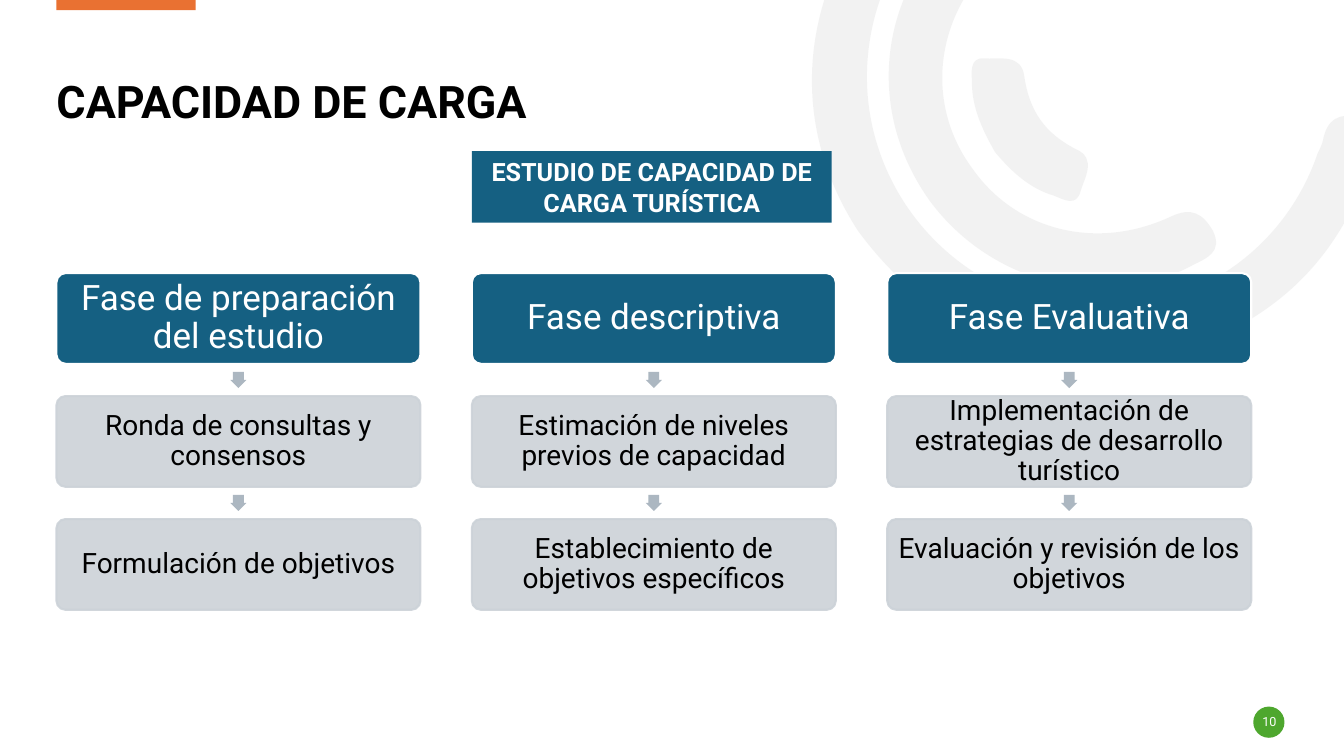
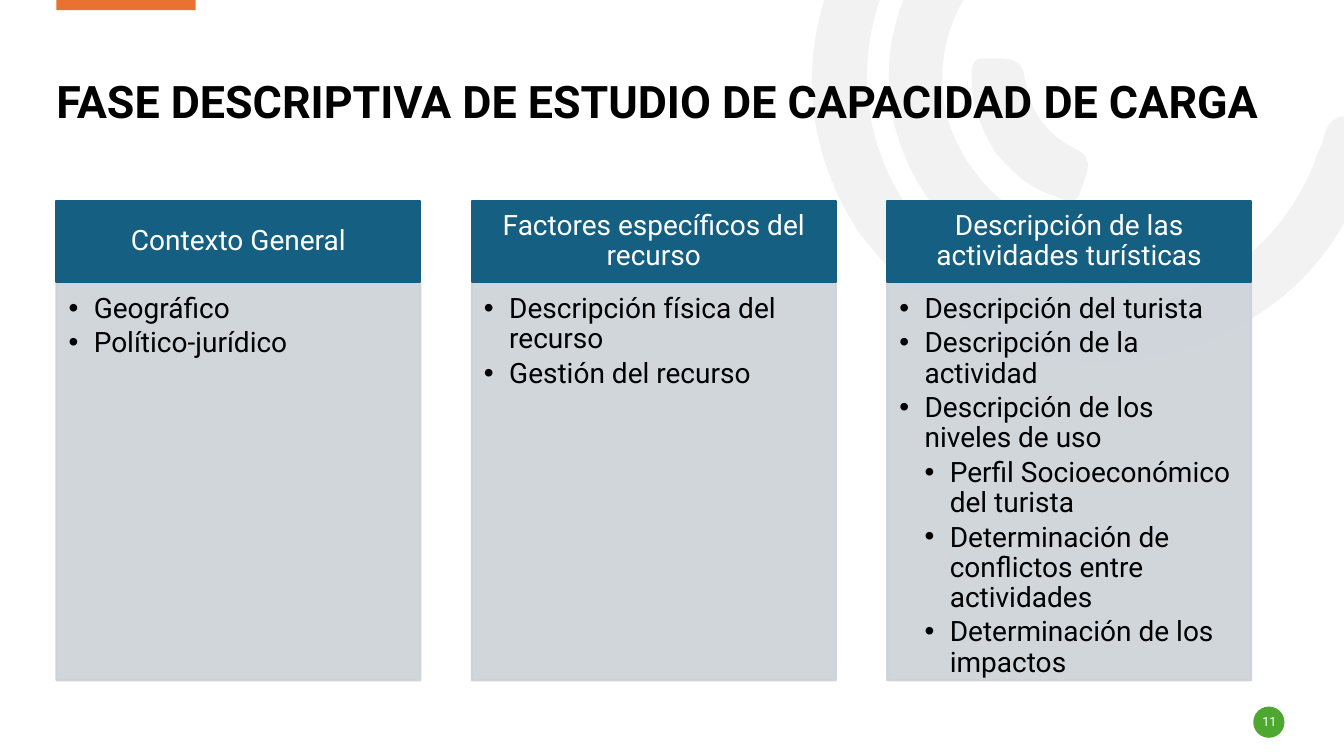
import pptx
import pptx.dml.color
import pptx.enum.shapes
import pptx.enum.text
import pptx.oxml
import pptx.oxml.ns
import pptx.util
from dataclasses import dataclass

Inches = pptx.util.Inches
Pt = pptx.util.Pt
Shape = pptx.enum.shapes.MSO_SHAPE
Align = pptx.enum.text.PP_ALIGN
Anchor = pptx.enum.text.MSO_ANCHOR

PHASES_TITLE = "CAPACIDAD DE CARGA"
STUDY = "ESTUDIO DE CAPACIDAD DE CARGA TURÍSTICA"
PHASES = [
    ("Fase de preparación del estudio", "Ronda de consultas y consensos",
     "Formulación de objetivos"),
    ("Fase descriptiva", "Estimación de niveles previos de capacidad",
     "Establecimiento de objetivos específicos"),
    ("Fase Evaluativa", "Implementación de estrategias de desarrollo turístico",
     "Evaluación y revisión de los objetivos"),
]
TOPICS_TITLE = "FASE DESCRIPTIVA DE ESTUDIO DE CAPACIDAD DE CARGA"
TOPICS = [  # heading, then (level, item)
    ("Contexto General", [(0, "Geográfico"), (0, "Político-jurídico")]),
    ("Factores específicos del recurso",
     [(0, "Descripción física del recurso"), (0, "Gestión del recurso")]),
    ("Descripción de las actividades turísticas",
     [(0, "Descripción del turista"), (0, "Descripción de la actividad"),
      (0, "Descripción de los niveles de uso"),
      (1, "Perfil Socioeconómico del turista"),
      (1, "Determinación de conflictos entre actividades"),
      (1, "Determinación de los impactos")]),
]
FIRST_NUMBER = 10

# Each arc: start point, then Bézier segments (two controls and an end), in inches.
ARCS = [
    ((8.51, 2.29), [
        (7.99, 1.49, 7.87, 0.5, 8.38, -0.5), (8.9, -1.52, 9.76, -2.03, 10.9, -2.07),
        (11.05, -2.07, 11.21, -2.1, 11.31, -1.95), (11.44, -1.75, 11.27, -1.54, 10.98, -1.54),
        (9.67, -1.54, 8.65, -0.59, 8.6, 0.68), (8.56, 1.81, 9.36, 2.81, 10.46, 3.02),
        (11.6, 3.24, 12.7, 2.61, 13.07, 1.52), (13.09, 1.48, 13.11, 1.44, 13.12, 1.4),
        (13.16, 1.19, 13.27, 1.11, 13.49, 1.17), (13.73, 1.24, 13.67, 1.41, 13.61, 1.56),
        (13.34, 2.45, 12.78, 3.07, 11.91, 3.41), (10.7, 3.87, 9.36, 3.45, 8.51, 2.29)]),
    ((9.22, 1.99), [
        (8.62, 1.15, 8.69, 0.07, 9.4, -0.68), (9.51, -0.79, 9.62, -0.95, 9.8, -0.78),
        (9.95, -0.64, 9.97, -0.5, 9.79, -0.32), (9.25, 0.26, 9.2, 1.08, 9.65, 1.68),
        (10.08, 2.29, 10.88, 2.49, 11.61, 2.15), (11.82, 2.05, 11.93, 2.12, 12.03, 2.29),
        (12.13, 2.5, 11.97, 2.56, 11.83, 2.63), (10.96, 3.1, 9.83, 2.82, 9.22, 1.99)]),
    ((9.87, 1.51), [
        (9.75, 1.3, 9.64, 1.07, 9.64, 0.82), (9.64, 0.73, 9.61, 0.57, 9.76, 0.58),
        (9.92, 0.59, 10.13, 0.53, 10.16, 0.76), (10.21, 1.1, 10.36, 1.32, 10.67, 1.48),
        (10.88, 1.57, 10.76, 1.76, 10.72, 1.89), (10.68, 2.06, 10.55, 1.98, 10.45, 1.94),
        (10.21, 1.87, 10.03, 1.7, 9.87, 1.51)]),
]


@dataclass(frozen=True)
class Theme:
    font: str = "Roboto"
    white: str = "FFFFFF"
    black: str = "000000"
    blue: str = "156082"
    grey: str = "CCD2D8"
    arrow: str = "ACB7C1"
    arc: str = "E8E8E8"
    orange: str = "E97132"
    green: str = "4EA72E"
    title_size: int = 32
    phase_size: int = 25
    text_size: int = 20
    study_size: int = 18
    number_size: int = 9
    line_width: float = 1.5


THEME = Theme()
COLUMN_WIDTH = 3.61
COLUMN_LEFT, COLUMN_RIGHT = 0.56, 12.41


def column_lefts(count):
    pitch = (COLUMN_RIGHT - COLUMN_LEFT - COLUMN_WIDTH) / (count - 1)
    return [COLUMN_LEFT + index * pitch for index in range(count)]


def rgb(value):
    return pptx.dml.color.RGBColor.from_string(value)


def paint(shape, fill, line=None, opacity=None):
    """Set flat fill and outline; opacity is a percentage for both."""
    shape.fill.solid()
    shape.fill.fore_color.rgb = rgb(fill)
    if line:
        shape.line.color.rgb = rgb(line)
        shape.line.width = Pt(THEME.line_width)
    else:
        shape.line.fill.background()
    if opacity:
        for color in shape.element.spPr.iter(pptx.oxml.ns.qn("a:srgbClr")):
            alpha = color.makeelement(pptx.oxml.ns.qn("a:alpha"), {"val": str(opacity * 1000)})
            color.append(alpha)


def add_box(page, kind, left, top, width, height, fill, line=None, opacity=None, corner=()):
    box = page.shapes.add_shape(kind, Inches(left), Inches(top), Inches(width), Inches(height))
    box.shadow.inherit = False
    for index, value in enumerate(corner):
        box.adjustments[index] = value
    paint(box, fill, line, opacity)
    return box


def write(box, text, size, color=THEME.white, bold=False, align=Align.CENTER,
          anchor=Anchor.MIDDLE, margins=(0, 0, 0, 0), spacing=0.9, after=0, bullets=False):
    """Fill a box with a string, or with (level, string) pairs."""
    frame = box.text_frame
    frame.word_wrap = True
    frame.auto_size = pptx.enum.text.MSO_AUTO_SIZE.NONE
    frame.vertical_anchor = anchor
    (frame.margin_left, frame.margin_top,
     frame.margin_right, frame.margin_bottom) = [Inches(value) for value in margins]
    items = [(0, text)] if isinstance(text, str) else text
    for index, (level, words) in enumerate(items):
        para = frame.add_paragraph() if index else frame.paragraphs[0]
        para.level = level
        para.alignment = align
        para.line_spacing = spacing
        para.space_before, para.space_after = Pt(0), Pt(after)
        if bullets:
            add_bullet(para, level)
        span = para.add_run()
        span.text = words
        span.font.name = THEME.font
        span.font.size = Pt(size)
        span.font.bold = bold
        span.font.color.rgb = rgb(color)


def add_bullet(para, level):
    properties = para._p.get_or_add_pPr()
    properties.set("marL", str(Inches(0.25 * (level + 1))))
    properties.set("indent", str(-Inches(0.25)))
    for tag, attributes in (("a:buFont", {"typeface": "Arial"}), ("a:buChar", {"char": "•"})):
        properties.append(properties.makeelement(pptx.oxml.ns.qn(tag), attributes))


def add_arc(page, start, curves):
    """Outline all curve points with lines, then join every three into one Bézier curve."""
    def to_units(x, y):
        return Inches(x), Inches(y)

    builder = page.shapes.build_freeform(*to_units(*start))
    builder.add_line_segments(
        [to_units(*curve[i:i + 2]) for curve in curves for i in (0, 2, 4)], close=True)
    arc = builder.convert_to_shape()
    lines = arc.element.xpath(".//a:lnTo")
    for index in range(0, len(lines), 3):
        curve = lines[index].makeelement(pptx.oxml.ns.qn("a:cubicBezTo"), {})
        lines[index].addprevious(curve)
        for line in lines[index:index + 3]:
            curve.append(line[0])
            line.getparent().remove(line)
    arc.shadow.inherit = False
    paint(arc, THEME.arc, opacity=53)
    return arc


def add_master_art(deck, page):
    """Draw the shared decoration on a page, then move it to the slide master."""
    art = [add_arc(page, start, curves) for start, curves in ARCS]
    art.append(add_box(page, Shape.RECTANGLE, 0.56, -0.02, 1.38, 0.12, THEME.orange))
    art.append(add_box(page, Shape.OVAL, 12.43, 7.01, 0.31, 0.31, THEME.green))
    tree = deck.slide_master.shapes.element
    for index, shape in enumerate(art):
        shape.element.xpath(".//p:cNvPr")[0].set("id", str(100 + index))
        tree.insert(2 + index, shape.element)


def place(box, left, top, width, height):
    box.left, box.top = Inches(left), Inches(top)
    box.width, box.height = Inches(width), Inches(height)


def add_page(deck, layout_name, title):
    page = deck.slides.add_slide(deck.slide_layouts.get_by_name(layout_name))
    place(page.shapes.title, 0.56, 0.26, 12.19, 1.01)
    write(page.shapes.title, title, THEME.title_size, color=THEME.black, bold=True,
          align=Align.LEFT, anchor=Anchor.BOTTOM)
    number = page.shapes.add_textbox(Inches(12.43), Inches(7.06), Inches(0.32), Inches(0.2))
    write(number, str(FIRST_NUMBER + len(deck.slides) - 1), THEME.number_size, spacing=1)
    return page


def fill_phases(page):
    top, step, height, arrow = 2.71, 1.22, 0.9, 0.16
    for left, phase in zip(column_lefts(len(PHASES)), PHASES):
        for row, text in enumerate(phase):
            row_top = top + row * step
            head = row == 0
            box = add_box(page, Shape.ROUNDED_RECTANGLE, left, row_top, COLUMN_WIDTH, height,
                          THEME.blue if head else THEME.grey,
                          line=THEME.white if head else THEME.grey,
                          opacity=None if head else 90, corner=(0.1,))
            write(box, text, THEME.phase_size if head else THEME.text_size,
                  color=THEME.white if head else THEME.black, margins=(0.03,) * 4)
            if not head:
                add_box(page, Shape.DOWN_ARROW, left + (COLUMN_WIDTH - arrow) / 2,
                        row_top - 0.24, arrow, arrow, THEME.arrow, corner=(0.67, 0.5))
    study = add_box(page, Shape.RECTANGLE, 4.68, 1.5, 3.57, 0.71, THEME.blue)
    write(study, STUDY, THEME.study_size, bold=True, spacing=1, margins=(0.1, 0.05, 0.1, 0.05))


def fill_topics(page):
    top, head_height, list_height = 1.99, 0.81, 3.95
    bodies = [box for box in page.placeholders if box.placeholder_format.idx != 0]
    for left, body, (heading, items) in zip(column_lefts(len(TOPICS)), bodies, TOPICS):
        head = add_box(page, Shape.RECTANGLE, left, top, COLUMN_WIDTH, head_height,
                       THEME.blue, line=THEME.blue)
        write(head, heading, THEME.text_size, margins=(0.16, 0.09, 0.16, 0.09))
        place(body, left, top + head_height, COLUMN_WIDTH, list_height)
        paint(body, THEME.grey, line=THEME.grey, opacity=90)
        write(body, items, THEME.text_size, color=THEME.black, align=Align.LEFT,
              anchor=Anchor.TOP, margins=(0.12, 0.12, 0.16, 0.17), after=3, bullets=True)
    for spare in bodies[len(TOPICS):]:
        spare.element.getparent().remove(spare.element)


def main():
    deck = pptx.Presentation()
    deck.slide_width, deck.slide_height = Inches(13.33), Inches(7.5)
    phases = add_page(deck, "Title Only", PHASES_TITLE)
    add_master_art(deck, phases)
    fill_phases(phases)
    fill_topics(add_page(deck, "Comparison", TOPICS_TITLE))
    deck.save("out.pptx")


if __name__ == "__main__":
    main()
